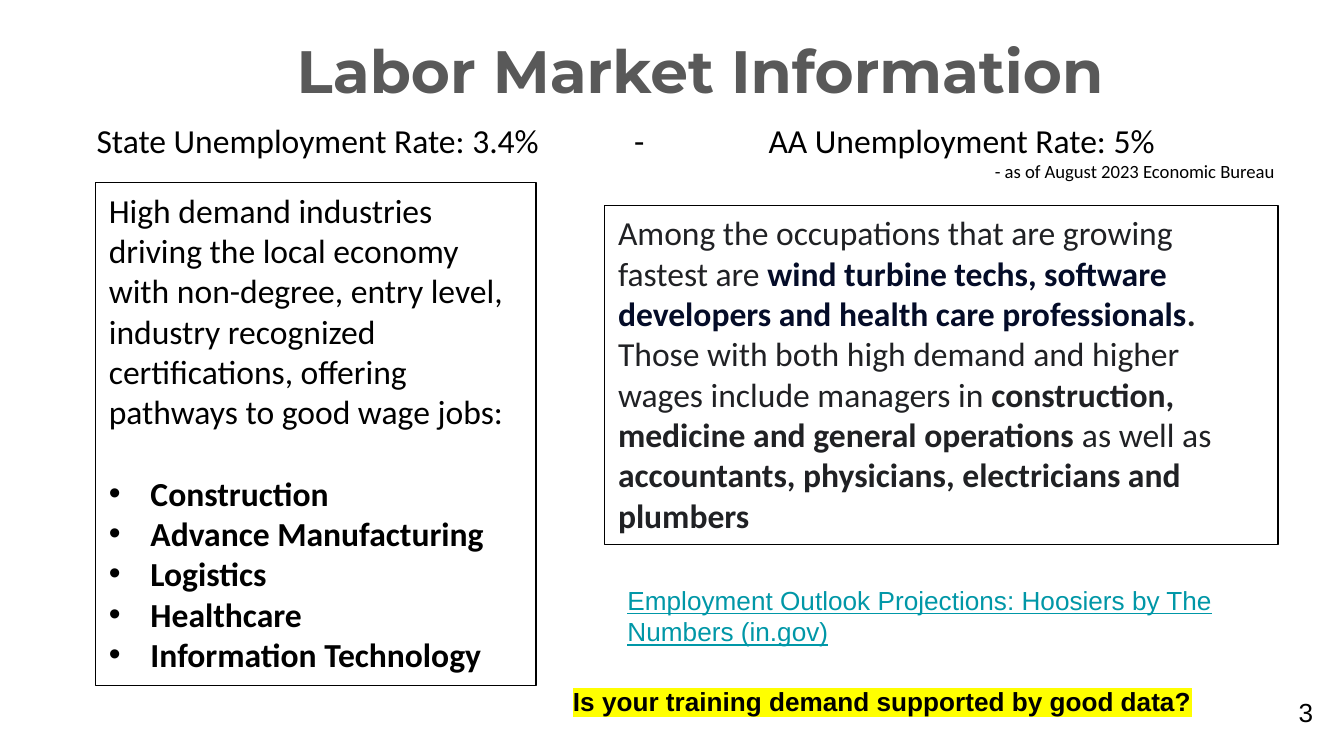
import pptx
import pptx.dml.color
import pptx.enum.shapes
import pptx.enum.text
import pptx.oxml
import pptx.oxml.ns
import pptx.util
from lxml import etree

Inches, Pt = pptx.util.Inches, pptx.util.Pt
RGBColor = pptx.dml.color.RGBColor
PP_ALIGN = pptx.enum.text.PP_ALIGN
MSO_ANCHOR = pptx.enum.text.MSO_ANCHOR
qn = pptx.oxml.ns.qn

BLACK = RGBColor(0x00, 0x00, 0x00)
GRAY = RGBColor(0x59, 0x59, 0x59)
CHARCOAL = RGBColor(0x20, 0x21, 0x24)
NAVY = RGBColor(0x04, 0x0C, 0x28)
TEAL = RGBColor(0x00, 0x97, 0xA7)
YELLOW = RGBColor(0xFF, 0xFF, 0x00)

INDUSTRIES = ["Construction", "Advance Manufacturing", "Logistics",
              "Healthcare", "Information Technology"]


def add_child(parent, tag, **attrs):
    return etree.SubElement(parent, qn(tag), {k: str(v) for k, v in attrs.items()})


class Deck:
    def __init__(self, width, height):
        self.prs = pptx.Presentation()
        self.prs.slide_width, self.prs.slide_height = Inches(width), Inches(height)
        self.s = None

    def new_slide(self, layout):
        self.s = self.prs.slides.add_slide(self.prs.slide_layouts[layout])

    def place(self, sp, box, anchor=MSO_ANCHOR.TOP):
        """Set position, margins and wrapping; return the text frame."""
        sp.left, sp.top, sp.width, sp.height = map(Inches, box)
        tf = sp.text_frame
        tf.word_wrap = True
        tf.auto_size = pptx.enum.text.MSO_AUTO_SIZE.NONE
        tf.vertical_anchor = anchor
        tf.margin_left = tf.margin_right = Inches(0.1)
        tf.margin_top = tf.margin_bottom = Inches(0.05)
        return tf

    def outline(self, sp):
        sp.fill.background()
        sp.line.color.rgb = BLACK
        sp.line.width = Pt(0.75)

    def style(self, p, size, font="Calibri", color=BLACK, bold=False,
              align=PP_ALIGN.LEFT, underline=None, spacing=None):
        p.alignment = align
        p.space_before = Pt(0)
        p.line_spacing = spacing
        f = p.font
        f.name, f.size, f.bold, f.underline = font, Pt(size), bold, underline
        f.color.rgb = color

    def title(self, text, box):
        tf = self.place(self.s.shapes.title, box, MSO_ANCHOR.MIDDLE)
        tf.text = text
        self.style(tf.paragraphs[0], 32, "Montserrat", GRAY, True,
                   PP_ALIGN.CENTER, spacing=0.9)

    def bullet_box(self, intro, items, box):
        sp = self.s.placeholders[1]
        self.outline(sp)
        tf = self.place(sp, box)
        tf.text = "\n".join([intro, *items])
        for i, p in enumerate(tf.paragraphs):
            pPr = p._p.get_or_add_pPr()
            indent = Inches(0.31) if i else 0
            pPr.set("marL", str(indent))
            pPr.set("indent", str(-indent))
            if i:
                add_child(pPr, "a:buFont", typeface="Arial")
                add_child(pPr, "a:buChar", char="•")
            else:
                add_child(pPr, "a:buNone")
                p.space_after = Pt(22)
            self.style(p, 18, bold=i > 0)

    def text(self, text, box, size, tabs=(), anchor=MSO_ANCHOR.TOP, **style):
        """Add a one-paragraph text box; return its text frame."""
        tf = self.place(self.s.shapes.add_textbox(0, 0, 0, 0), box, anchor)
        p = tf.paragraphs[0]
        p.add_run().text = text
        if tabs:
            tab_list = add_child(p._p.get_or_add_pPr(), "a:tabLst")
            for pos in tabs:
                add_child(tab_list, "a:tab", pos=Inches(pos), algn="l")
        self.style(p, size, **style)
        return tf

    def rich_box(self, runs, box):
        """Add an outlined rectangle with (text, bold, color) runs."""
        sp = self.s.shapes.add_shape(
            pptx.enum.shapes.MSO_SHAPE.RECTANGLE, 0, 0, 0, 0)
        sp.shadow.inherit = False
        self.outline(sp)
        p = self.place(sp, box).paragraphs[0]
        self.style(p, 18, color=CHARCOAL)
        for text, bold, color in runs:
            r = p.add_run()
            r.text = text
            r.font.bold = bold
            r.font.color.rgb = color

    def highlight(self, r, color):
        mark = add_child(r._r.get_or_add_rPr(), "a:highlight")
        add_child(mark, "a:srgbClr", val=color)


def main():
    deck = Deck(10, 10 * 9 / 16)
    deck.new_slide(1)
    deck.title("Labor Market Information", (0.55, 0.1, 9.32, 0.91))
    deck.bullet_box(
        "High demand industries driving the local economy with non-degree, "
        "entry level, industry recognized certifications, offering pathways "
        "to good wage jobs:", INDUSTRIES, (0.71, 1.36, 3.28, 3.74))

    rates = deck.text(
        "State Unemployment Rate: 3.4% \t-\tAA Unemployment Rate: 5%",
        (0.62, 0.84, 8.96, 0.57), 18, tabs=(4, 5))
    p = rates.add_paragraph()
    p.text = "- as of August 2023 Economic Bureau"
    deck.style(p, 10, align=PP_ALIGN.RIGHT)

    deck.rich_box([
        ("Among the occupations that are growing fastest are ", False, CHARCOAL),
        ("wind turbine techs, software developers and health care professionals",
         True, NAVY),
        (". ", True, CHARCOAL),
        ("Those with both high demand and higher wages include managers in ",
         False, CHARCOAL),
        ("construction, medicine and general operations ", True, CHARCOAL),
        ("as well as ", False, CHARCOAL),
        ("accountants, physicians, electricians and plumbers", True, CHARCOAL),
    ], (4.5, 1.53, 5.01, 2.52))

    deck.text("Employment Outlook Projections: Hoosiers by The Numbers (in.gov)",
              (4.57, 4.3, 5.01, 0.57), 14, font="Arial", color=TEAL, underline=True)
    question = deck.text("Is your training demand supported by good data?",
                         (4.12, 5.05, 4.89, 0.34), 14, font="Arial", bold=True,
                         align=PP_ALIGN.CENTER)
    deck.highlight(question.paragraphs[0].runs[0], YELLOW)
    deck.text("3", (9.27, 5.1, 0.6, 0.43), 14, anchor=MSO_ANCHOR.MIDDLE,
              font="Arial", align=PP_ALIGN.RIGHT, spacing=0.9)
    deck.prs.save("out.pptx")


if __name__ == "__main__":
    main()
